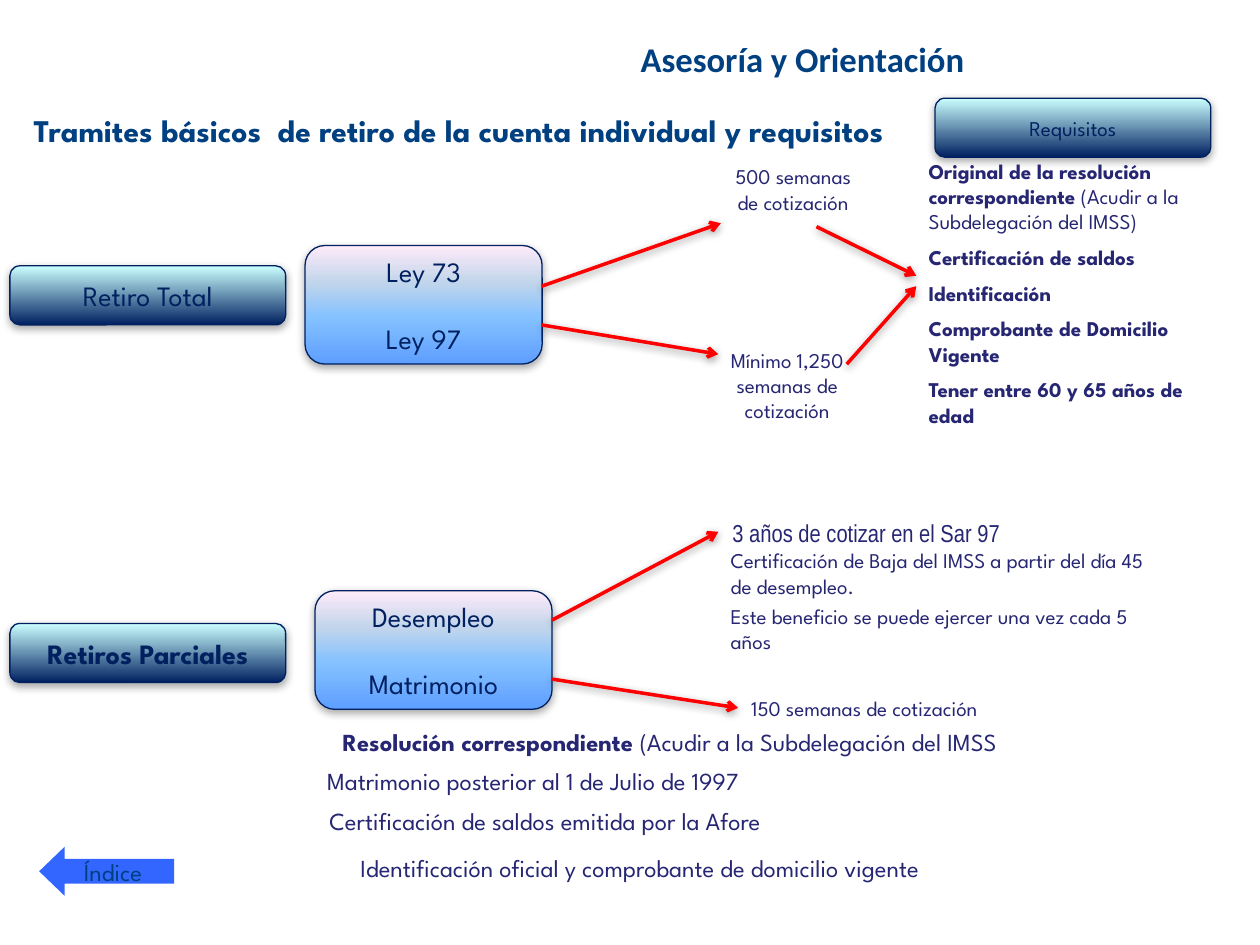
import pptx
import pptx.util
import pptx.dml.color
import pptx.enum.shapes
import pptx.enum.text
import pptx.oxml
import pptx.oxml.ns

Cm = pptx.util.Cm
Pt = pptx.util.Pt
RGB = pptx.dml.color.RGBColor
Kind = pptx.enum.shapes.MSO_SHAPE
Line = pptx.enum.shapes.MSO_CONNECTOR
Align = pptx.enum.text.PP_ALIGN
Anchor = pptx.enum.text.MSO_ANCHOR
Size = pptx.enum.text.MSO_AUTO_SIZE

NAVY = RGB(0x00, 0x20, 0x60)
TEAL = RGB(0x00, 0x40, 0x80)
INK = RGB(0x26, 0x26, 0x73)
RED = RGB(0xFF, 0x00, 0x00)
BLUE = RGB(0x33, 0x66, 0xFF)
AQUA = RGB(0xCB, 0xFF, 0xFF)
DARK = [(0, NAVY), (100, AQUA)]
PALE = [(0, RGB(0x5E, 0x9E, 0xFF)), (40, RGB(0x85, 0xC2, 0xFF)),
        (70, RGB(0xC4, 0xD6, 0xEB)), (100, RGB(0xFF, 0xEB, 0xFA))]

FONT = "League Spartan"
LEFT, MID = Align.LEFT, Align.CENTER

BAR = dict(kind=Kind.ROUNDED_RECTANGLE, size=(5.56, 1.19), stops=DARK)
PANEL = dict(kind=Kind.FLOWCHART_ALTERNATE_PROCESS, size=(4.78, 2.39), stops=PALE)
BOXES = [
    (BAR, (0.2, 5.36), ["Retiro Total"], 16, False),
    (BAR, (0.2, 12.57), ["Retiros Parciales"], 16, True),
    (PANEL, (6.35, 11.91), ["Desempleo", "Matrimonio"], 16, False),
    (PANEL, (6.15, 4.95), ["Ley 73", "Ley 97"], 16, False),
    (BAR, (18.85, 1.98), ["Requisitos"], 12, False),
]

ARROWS = [
    (10.92, 5.77, 14.53, 4.5),
    (11.13, 13.69, 14.88, 14.27),
    (10.92, 6.55, 14.48, 7.14),
    (11.13, 12.5, 14.48, 10.72),
    (16.46, 4.57, 18.47, 5.56),
    (17.07, 7.34, 18.47, 5.77),
]

NEEDS = [
    [("Original de la resolución correspondiente", True),
     (" (Acudir a la Subdelegación del IMSS)", False)],
    [("Certificación de saldos", True)],
    [("Identificación", True)],
    [("Comprobante de Domicilio Vigente", True)],
    [("Tener entre 60 y 65 años de edad", True)],
]
PROOF = [[("Resolución correspondiente", True),
          (" (Acudir a la Subdelegación del IMSS", False)]]

HEAD = dict(bold=True, color=TEAL)
TEXTS = [
    ((11.43, 0.64, 9.65, 0.89), "Asesoría y Orientación ", 19.8, MID, True,
     dict(HEAD, name="Calibri")),
    ((0.43, 2.11, 17.86, 1.8),
     "Tramites básicos  de retiro de la cuenta individual y requisitos",
     18, LEFT, True, HEAD),
    ((14.48, 10.31, 5.97, 0.86), "3 años de cotizar en el Sar 97", 14, MID, False,
     dict(name="Arial Narrow")),
    ((14.48, 10.92, 8.94, 1.3),
     "Certificación de Baja del IMSS a partir del día 45 de desempleo.",
     12, LEFT, True, {}),
    ((14.48, 12.04, 9.12, 1.3),
     "Este beneficio se puede ejercer una vez cada 5 años", 12, LEFT, True, {}),
    ((14.48, 3.18, 3.02, 2.31), "500 semanas de cotización", 12, MID, True, {}),
    ((13.89, 6.88, 3.96, 1.8), "Mínimo 1,250 semanas de cotización", 12, MID, True, {}),
    ((18.47, 3.07, 6.55, 5.97), NEEDS, 12, LEFT, True, {}),
    ((14.33, 13.89, 6.3, 0.76), "150 semanas de cotización ", 12, MID, False, {}),
    ((4.5, 14.53, 18.01, 0.86), PROOF, 14, MID, True, {}),
    ((5.49, 15.32, 10.52, 0.86), "Matrimonio posterior al 1 de Julio de 1997",
     14, MID, False, {}),
    ((4.9, 16.13, 12.19, 0.86), "Certificación de saldos emitida por la Afore",
     14, MID, True, {}),
    ((5.69, 17.07, 14.43, 0.86),
     "Identificación oficial y comprobante de domicilio vigente", 14, MID, False, {}),
]


def apply(thing, look):
    for key, val in look.items():
        setattr(thing, key, val)


def node(xml):
    head, tail = xml.split(" ", 1)
    return pptx.oxml.parse_xml(f"{head} {pptx.oxml.ns.nsdecls('a')} {tail}")


def shade(item, alpha, dist):
    item._element.spPr.append(node(
        f'<a:effectLst ><a:outerShdw blurRad="{Pt(5)}" dist="{Pt(dist)}" '
        f'dir="5400000" rotWithShape="0"><a:srgbClr val="000000">'
        f'<a:alpha val="{alpha * 1000}"/></a:srgbClr></a:outerShdw></a:effectLst>'))


def blend(shape, stops):
    shape.fill.gradient()
    shape.fill.gradient_angle = 90
    old = shape._element.spPr.find(".//" + pptx.oxml.ns.qn("a:gsLst"))
    marks = "".join(f'<a:gs pos="{pos * 1000}"><a:srgbClr val="{hue}"/></a:gs>'
                    for pos, hue in stops)
    old.getparent().replace(old, node(f"<a:gsLst >{marks}</a:gsLst>"))


def write(shape, paras, size, align, gap, look, frame):
    apply(shape.text_frame, frame)
    look = dict(dict(name=FONT, color=INK, bold=False), **look)
    hue = look.pop("color")
    for num, runs in enumerate(paras):
        para = shape.text_frame.paragraphs[0] if num == 0 else shape.text_frame.add_paragraph()
        para.alignment = align
        if num:
            para.space_before = Pt(gap)
        for words, bold in runs:
            run = para.add_run()
            run.text = words
            apply(run.font, dict(look, size=Pt(size), bold=bold or look["bold"]))
            run.font.color.rgb = hue


deck = pptx.Presentation()
apply(deck, dict(slide_width=Cm(25.4), slide_height=Cm(19.05)))
slide = deck.slides.add_slide(deck.slide_layouts[6])
shapes = slide.shapes

for form, spot, lines, size, bold in BOXES:
    box = shapes.add_shape(form["kind"], *map(Cm, spot + form["size"]))
    blend(box, form["stops"])
    box.line.color.rgb = NAVY
    box.line.width = Pt(0.75)
    shade(box, 35, 1.8)
    write(box, [[(line, bold)] for line in lines], size, MID, 19,
          dict(color=NAVY), dict(vertical_anchor=Anchor.MIDDLE, word_wrap=True))

for ends in ARROWS:
    arrow = shapes.add_connector(Line.STRAIGHT, *map(Cm, ends))
    arrow.line.color.rgb = RED
    arrow.line.width = Pt(2)
    arrow.line._get_or_add_ln().append(node('<a:tailEnd type="arrow"/>'))
    shade(arrow, 38, 1.6)

for place, words, size, align, wrap, look in TEXTS:
    label = shapes.add_textbox(*map(Cm, place))
    paras = [[(words, False)]] if isinstance(words, str) else words
    write(label, paras, size, align, size / 2, look,
          dict(word_wrap=wrap, auto_size=Size.SHAPE_TO_FIT_TEXT))

back = shapes.add_shape(Kind.LEFT_ARROW, *map(Cm, (0.79, 17.07, 2.72, 0.99)))
back.adjustments[1] = 0.52
back.shadow.inherit = False
back.fill.solid()
back.fill.fore_color.rgb = BLUE
back.line.fill.background()
write(back, [[("Índice", False)]], 14, MID, 0, dict(color=TEAL),
      dict(vertical_anchor=Anchor.MIDDLE, word_wrap=False))

deck.save("out.pptx")
